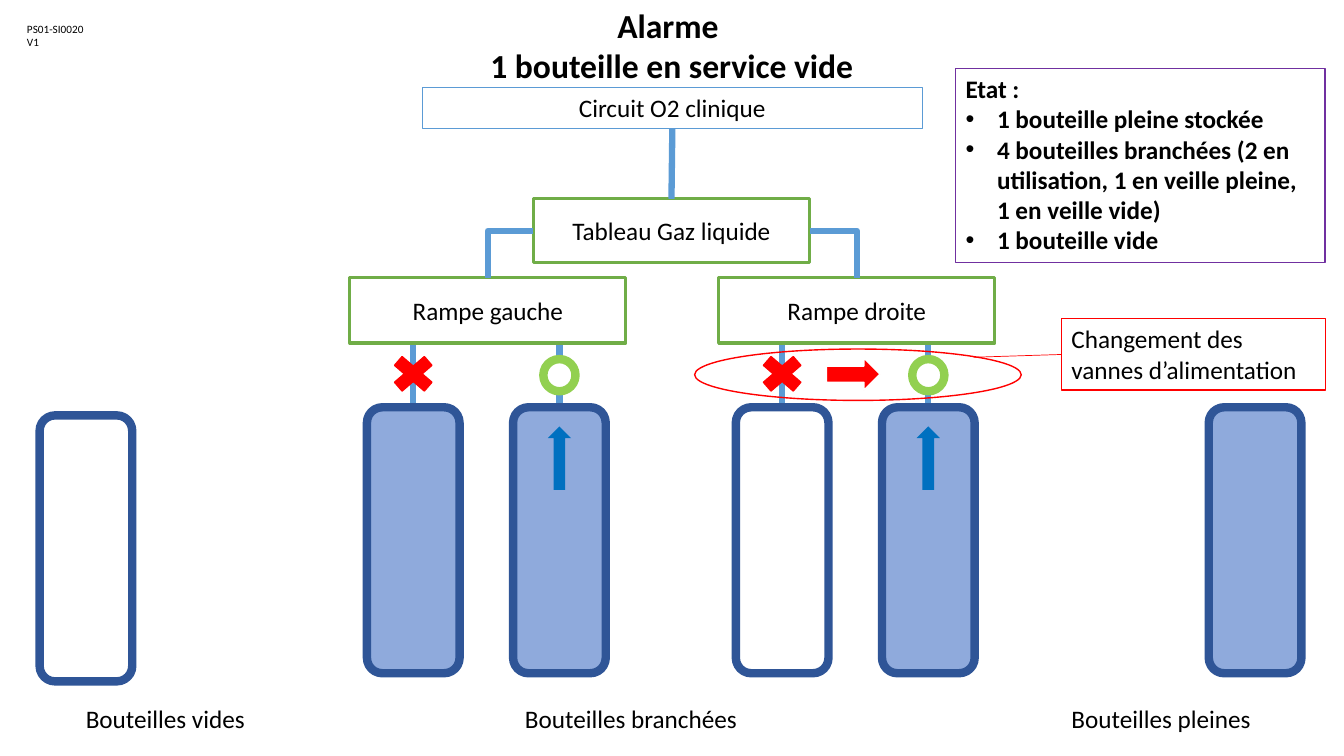
from lxml import etree
from pptx import Presentation
from pptx.dml.color import RGBColor
from pptx.enum.shapes import MSO_CONNECTOR, MSO_SHAPE
from pptx.enum.text import MSO_ANCHOR, MSO_AUTO_SIZE, PP_ALIGN
from pptx.oxml.ns import qn
from pptx.util import Pt

RECTANGLE = MSO_SHAPE.RECTANGLE
ROUNDED = MSO_SHAPE.ROUNDED_RECTANGLE
OVAL = MSO_SHAPE.OVAL
CROSS = MSO_SHAPE.MATH_MULTIPLY
UP_ARROW = MSO_SHAPE.UP_ARROW
RIGHT_ARROW = MSO_SHAPE.RIGHT_ARROW
STRAIGHT = MSO_CONNECTOR.STRAIGHT
ELBOW = MSO_CONNECTOR.ELBOW
LEFT, CENTER = PP_ALIGN.LEFT, PP_ALIGN.CENTER
TOP, MIDDLE = MSO_ANCHOR.TOP, MSO_ANCHOR.MIDDLE
TITLE_ONLY = 5

# Connection sites of a rectangle
SITE_TOP, SITE_LEFT, SITE_BOTTOM, SITE_RIGHT = range(4)

PIPE, GREEN, LIGHT_GREEN = "5B9BD5", "70AD47", "92D050"
RED, PURPLE, ARROW_BLUE = "FF0000", "7030A0", "0070C0"
BOTTLE_FILL, BOTTLE_LINE = "8FAADC", "2F5597"
WHITE, BLACK = "FFFFFF", "000000"


def color(hex_string):
    return RGBColor.from_string(hex_string)


class Diagram:
    font = "Calibri"
    text_size = 18

    def __init__(self, slide):
        self.slide = slide

    def set_text(self, shape, text, align=CENTER, anchor=TOP, size=text_size, bold=False):
        frame = shape.text_frame
        frame.text = text
        frame.word_wrap = True
        frame.auto_size = MSO_AUTO_SIZE.NONE
        frame.vertical_anchor = anchor
        for paragraph in frame.paragraphs:
            paragraph.alignment = align
            paragraph.line_spacing = 1.0
            paragraph.space_before = Pt(0)
            for run in paragraph.runs:
                run.font.name = self.font
                run.font.size = Pt(size)
                run.font.bold = bold
                run.font.color.rgb = color(BLACK)

    def title(self, text, left, top, width, height):
        shape = self.slide.shapes.title
        shape.left, shape.top = Pt(left), Pt(top)
        shape.width, shape.height = Pt(width), Pt(height)
        self.set_text(shape, text, size=24, bold=True)

    def shape(self, kind, left, top, width, height, fill=None, line=None, weight=1):
        shape = self.slide.shapes.add_shape(kind, Pt(left), Pt(top), Pt(width), Pt(height))
        shape.shadow.inherit = False
        if fill:
            shape.fill.solid()
            shape.fill.fore_color.rgb = color(fill)
        else:
            shape.fill.background()
        if line:
            shape.line.color.rgb = color(line)
            shape.line.width = Pt(weight)
        else:
            shape.line.fill.background()
        return shape

    def centered(self, kind, x, y, width, height, **style):
        return self.shape(kind, x - width / 2, y - height / 2, width, height, **style)

    def label(self, text, left, top, width, height, **style):
        box = self.slide.shapes.add_textbox(Pt(left), Pt(top), Pt(width), Pt(height))
        self.set_text(box, text, **style)

    def line(self, x1, y1, x2, y2, line=PIPE, weight=4.5, kind=STRAIGHT):
        connector = self.slide.shapes.add_connector(kind, Pt(x1), Pt(y1), Pt(x2), Pt(y2))
        connector.line.color.rgb = color(line)
        connector.line.width = Pt(weight)
        properties = connector._element.spPr
        etree.SubElement(properties, qn("a:effectLst"))
        if kind == ELBOW:
            properties.find(qn("a:prstGeom")).set("prst", "bentConnector2")
        return connector

    def join(self, start, start_site, end, end_site, kind=STRAIGHT):
        connector = self.line(0, 0, 0, 0, kind=kind)
        connector.begin_connect(start, start_site)
        connector.end_connect(end, end_site)

    def bullet(self, paragraph, indent=22.5):
        properties = paragraph._p.get_or_add_pPr()
        properties.set("marL", str(Pt(indent)))
        properties.set("indent", str(-Pt(indent)))
        etree.SubElement(properties, qn("a:buFont")).set("typeface", "Arial")
        etree.SubElement(properties, qn("a:buChar")).set("char", "•")

    def bottle(self, x, top, full=True):
        self.shape(ROUNDED, x - 33.1, top, 66.2, 190, fill=BOTTLE_FILL if full else None,
                   line=BOTTLE_LINE, weight=6)


def main():
    presentation = Presentation()
    presentation.slide_width, presentation.slide_height = Pt(960), Pt(540)
    slide = presentation.slides.add_slide(presentation.slide_layouts[TITLE_ONLY])
    diagram = Diagram(slide)

    # Title and document reference
    diagram.title("Alarme \n1 bouteille en service vide", 35.3, 0, 889.2, 65.5)
    diagram.label("PS01-SI0020\nV1", 12.2, 12.2, 209.5, 26.6, align=LEFT, size=8)

    # Clinic circuit and control panel
    circuit = diagram.shape(RECTANGLE, 301.7, 62.6, 357.1, 29.1, line=PIPE, weight=0.75)
    diagram.set_text(circuit, "Circuit O2 clinique")
    panel = diagram.shape(RECTANGLE, 381, 142, 197.3, 45.7, fill=WHITE, line=GREEN, weight=2.25)
    diagram.set_text(panel, "Tableau Gaz liquide", anchor=MIDDLE)
    diagram.join(circuit, SITE_BOTTOM, panel, SITE_TOP)

    # Ramps, each with a closed bottle on the left and an open one on the right
    bottle_top, valve_y = 290.9, 268
    ramps = [("Rampe gauche", 348.5, SITE_LEFT, True), ("Rampe droite", 612, SITE_RIGHT, False)]
    for name, center, panel_site, closed_full in ramps:
        closed_x, open_x = center - 53.3, center + 51.1
        for x, full in ((closed_x, closed_full), (open_x, True)):
            diagram.line(x, bottle_top, x, 244)
            diagram.bottle(x, bottle_top, full)
        ramp = diagram.shape(RECTANGLE, center - 98.65, 198.2, 197.3, 46.8,
                             fill=WHITE, line=GREEN, weight=2.25)
        diagram.set_text(ramp, name, anchor=MIDDLE)
        diagram.join(panel, panel_site, ramp, SITE_TOP, ELBOW)
        diagram.centered(CROSS, closed_x, valve_y - 1, 41, 35.3, fill=RED, line=RED)
        diagram.centered(OVAL, open_x, valve_y, 23, 23, fill=WHITE, line=LIGHT_GREEN, weight=6)
        diagram.centered(UP_ARROW, open_x, 327.3, 16.6, 45.4, fill=ARROW_BLUE)

    # Stored bottles and captions
    diagram.bottle(61.4, 296.7, full=False)
    diagram.bottle(896.5, bottle_top)
    captions = [("Bouteilles vides", -30.2), ("Bouteilles branchées", 302.4),
                ("Bouteilles pleines", 681.1)]
    for caption, left in captions:
        diagram.label(caption, left, 499, 296.6, 29.1)

    # Valve change
    note = diagram.shape(RECTANGLE, 758.2, 227.7, 188.8, 50.9, line=RED, weight=0.75)
    diagram.set_text(note, "Changement des vannes d’alimentation", align=LEFT)
    diagram.shape(OVAL, 496.2, 249.3, 233.3, 36.7, line=RED)
    diagram.line(758.2, 253.2, 695.5, 255.2, line=RED, weight=0.5)
    diagram.shape(RIGHT_ARROW, 590.4, 255.8, 38.2, 23, fill=RED, line=WHITE)

    # State summary
    state = diagram.shape(RECTANGLE, 682.6, 49, 263.8, 138.5, line=PURPLE)
    diagram.set_text(state, "\n".join([
        "Etat :",
        "1 bouteille pleine stockée",
        "4 bouteilles branchées (2 en utilisation, 1 en veille pleine, 1 en veille vide)",
        "1 bouteille vide",
    ]), align=LEFT, bold=True)
    for paragraph in state.text_frame.paragraphs[1:]:
        diagram.bullet(paragraph)

    presentation.save("out.pptx")


if __name__ == "__main__":
    main()
